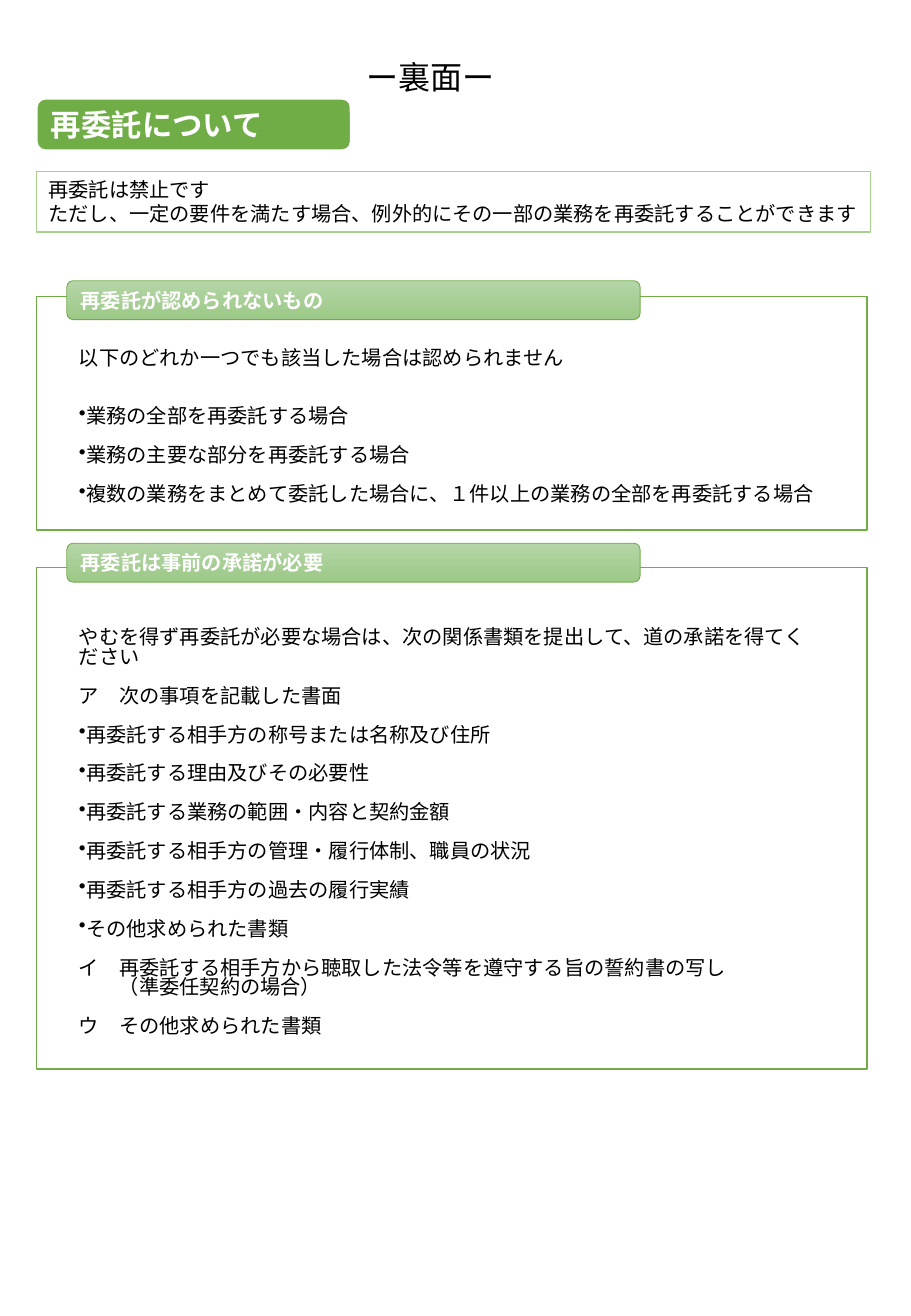
"""Build the reverse-side page on subcontracting rules."""
from lxml import etree
from pptx import Presentation, util as u
from pptx.dml.color import RGBColor
from pptx.enum import shapes, text
from pptx.oxml import ns

FONT = "Noto Sans CJK JP"
COLORS = {"green": "70AD47", "pale": "A9D18E", "tag_top": "B5D5A7",
          "tag_bottom": "9CC987", "white": "FFFFFF", "black": "000000"}
PAGE_WIDTH, PAGE_HEIGHT = 7.5, 10.83
LEFT, PANEL_WIDTH = 0.3, 6.84
TAG_LEFT, TAG_WIDTH, TAG_HEIGHT = 0.55, 4.72, 0.32
BODY_SIZE, ROW = 12, 11.5
BULLET_INDENT, HANGING_LEFT = 0.06, 0.33

PAGE_TITLE = "ー裏面ー"
HEADING = "再委託について"
NOTICE = ["再委託は禁止です",
          "ただし、一定の要件を満たす場合、例外的にその一部の業務を再委託することができます"]

# Each line: kind, empty rows before it, wording.
SECTIONS = [
    {"tag": "再委託が認められないもの", "tag_top": 2.31, "top": 2.44, "height": 1.92,
     "text_top": 0.44, "lines": [
         ("plain", 0, "以下のどれか一つでも該当した場合は認められません"),
         ("bullet", 2, "業務の全部を再委託する場合"),
         ("bullet", 1, "業務の主要な部分を再委託する場合"),
         ("bullet", 1, "複数の業務をまとめて委託した場合に、１件以上の業務の全部を再委託する場合")]},
    {"tag": "再委託は事前の承諾が必要", "tag_top": 4.47, "top": 4.67, "height": 4.13,
     "text_top": 0.51, "lines": [
         ("plain", 0, "やむを得ず再委託が必要な場合は、次の関係書類を提出して、道の承諾を得てください"),
         ("plain", 1, "ア　次の事項を記載した書面"),
         ("bullet", 1, "再委託する相手方の称号または名称及び住所"),
         ("bullet", 1, "再委託する理由及びその必要性"),
         ("bullet", 1, "再委託する業務の範囲・内容と契約金額"),
         ("bullet", 1, "再委託する相手方の管理・履行体制、職員の状況"),
         ("bullet", 1, "再委託する相手方の過去の履行実績"),
         ("bullet", 1, "その他求められた書類"),
         ("plain", 1, "イ　再委託する相手方から聴取した法令等を遵守する旨の誓約書の写し"),
         ("hanging", 0, "（準委任契約の場合）"),
         ("plain", 1, "ウ　その他求められた書類")]},
]


def rgb(name):
    return RGBColor.from_string(COLORS[name])


def place(page, kind, left, top, width, height, line, weight, fill=None):
    shape = page.shapes.add_shape(kind, *map(u.Inches, (left, top, width, height)))
    shape.shadow.inherit = False
    if fill:
        shape.fill.solid()
        shape.fill.fore_color.rgb = rgb(fill)
    else:
        shape.fill.background()
    shape.line.color.rgb = rgb(line)
    shape.line.width = u.Pt(weight)
    return shape


def write(shape, lines, size, color="black", bold=False,
          align=text.PP_ALIGN.LEFT, anchor=text.MSO_ANCHOR.MIDDLE):
    frame = shape.text_frame
    frame.text = "\n".join(lines)
    frame.word_wrap = True
    frame.vertical_anchor = anchor
    for para in frame.paragraphs:
        para.alignment = align
        for span in para.runs:
            span.font.name = FONT
            span.font.size = u.Pt(size)
            span.font.bold = bold
            span.font.color.rgb = rgb(color)
            east_asian = etree.SubElement(span.font._element, ns.qn("a:ea"))
            east_asian.set("typeface", FONT)
    return frame


def set_indent(para, kind):
    props = para._p.get_or_add_pPr()
    if kind == "bullet":
        props.set("marL", str(u.Inches(BULLET_INDENT)))
        props.set("indent", str(-u.Inches(BULLET_INDENT)))
        etree.SubElement(props, ns.qn("a:buChar")).set("char", "•")
    elif kind == "hanging":
        props.set("marL", str(u.Inches(HANGING_LEFT)))


def add_panel(page, section):
    panel = place(page, shapes.MSO_SHAPE.RECTANGLE, LEFT, section["top"],
                  PANEL_WIDTH, section["height"], "green", 1, "white")
    frame = write(panel, [wording for _, _, wording in section["lines"]],
                  BODY_SIZE, anchor=text.MSO_ANCHOR.TOP)
    frame.margin_left = frame.margin_right = u.Inches(0.35)
    frame.margin_top = u.Inches(section["text_top"])
    frame.margin_bottom = u.Inches(0.09)
    for para, (kind, rows, _) in zip(frame.paragraphs, section["lines"]):
        para.line_spacing = 0.8
        if rows:
            para.space_before = u.Pt(rows * ROW)
        set_indent(para, kind)


def add_tag(page, section):
    tag = place(page, shapes.MSO_SHAPE.FLOWCHART_ALTERNATE_PROCESS, TAG_LEFT,
                section["tag_top"], TAG_WIDTH, TAG_HEIGHT, "green", 0.5)
    tag.fill.gradient()
    tag.fill.gradient_angle = 270
    for stop, name in zip(tag.fill.gradient_stops, ("tag_top", "tag_bottom")):
        stop.color.rgb = rgb(name)
    write(tag, [section["tag"]], BODY_SIZE, "white", True)


def main():
    deck = Presentation()
    deck.slide_width, deck.slide_height = u.Inches(PAGE_WIDTH), u.Inches(PAGE_HEIGHT)
    page = deck.slides.add_slide(deck.slide_layouts[6])

    title = page.shapes.add_textbox(*map(u.Inches, (0, 0.42, 7.09, 0.42)))
    write(title, [PAGE_TITLE], 19, align=text.PP_ALIGN.CENTER)
    heading = place(page, shapes.MSO_SHAPE.ROUNDED_RECTANGLE, LEFT, 0.81,
                    2.59, 0.43, "white", 1.5, "green")
    write(heading, [HEADING], 18, "white", True)
    notice = place(page, shapes.MSO_SHAPE.RECTANGLE, LEFT, 1.41, 6.87, 0.5,
                   "pale", 0.75)
    write(notice, NOTICE, BODY_SIZE, anchor=text.MSO_ANCHOR.TOP)

    for section in SECTIONS:
        add_panel(page, section)
        add_tag(page, section)
    deck.save("out.pptx")


if __name__ == "__main__":
    main()
